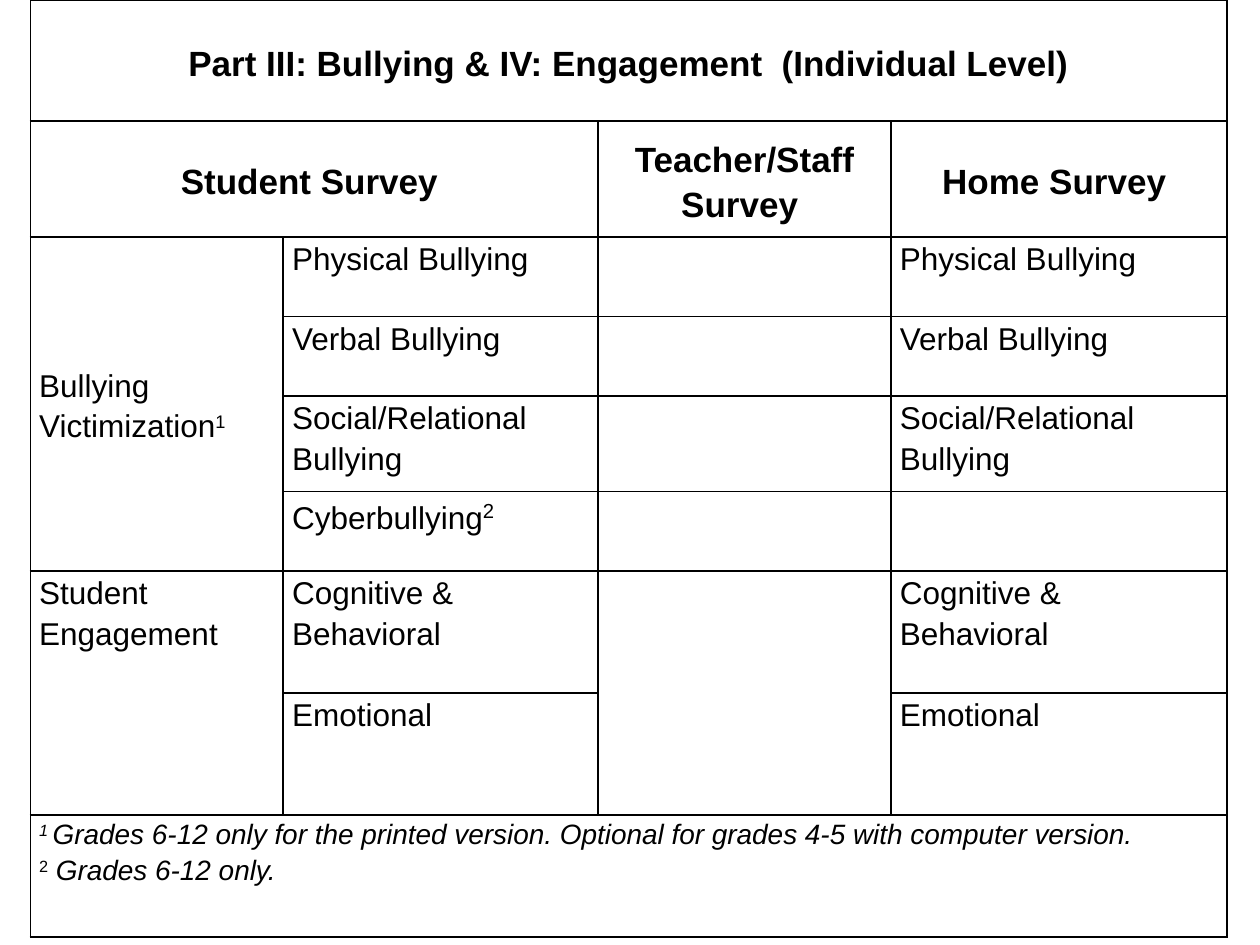
from lxml import etree
from pptx import Presentation
from pptx import util as u
from pptx.dml.color import RGBColor
from pptx.enum import text
from pptx.oxml.ns import qn

COLORS = {"ink": "000000", "paper": "FFFFFF"}
COLUMN_WIDTHS = [5.1, 6.35, 5.9, 6.78]
ROW_HEIGHTS = [2.44, 2.34, 1.6, 1.6, 1.93, 1.6, 2.46, 2.46, 2.46]

# First row, first column, last row, last column
MERGES = [(0, 0, 0, 3), (1, 0, 1, 1), (2, 0, 5, 0),
          (6, 0, 7, 0), (6, 2, 7, 2), (8, 0, 8, 3)]

HEADINGS = {
    (0, 0): "Part III: Bullying & IV: Engagement  (Individual Level)",
    (1, 0): "Student Survey ",
    (1, 2): "Teacher/Staff Survey ",
    (1, 3): "Home Survey ",
}
# Topics asked of students (column 1) and at home (column 3)
SHARED_TOPICS = {
    2: "Physical Bullying",
    3: "Verbal Bullying",
    4: "Social/Relational Bullying",
    6: "Cognitive & Behavioral",
    7: "Emotional",
}


def color(name):
    return RGBColor.from_string(COLORS[name])


def add_borders(cell):
    properties = cell._tc.get_or_add_tcPr()
    for index, side in enumerate(("lnL", "lnR", "lnT", "lnB")):
        line = etree.Element(qn("a:" + side), w=str(u.Pt(1)))
        fill = etree.SubElement(line, qn("a:solidFill"))
        etree.SubElement(fill, qn("a:srgbClr"), val=COLORS["ink"])
        properties.insert(index, line)


def add_table(slide):
    shape = slide.shapes.add_table(
        len(ROW_HEIGHTS), len(COLUMN_WIDTHS), u.Cm(0.61), u.Cm(0),
        u.Cm(sum(COLUMN_WIDTHS)), u.Cm(sum(ROW_HEIGHTS)))
    table = shape.table
    table.first_row = table.horz_banding = False
    for column, width in zip(table.columns, COLUMN_WIDTHS):
        column.width = u.Cm(width)
    for row, height in zip(table.rows, ROW_HEIGHTS):
        row.height = u.Cm(height)
    for cell in table.iter_cells():
        cell.fill.solid()
        cell.fill.fore_color.rgb = color("paper")
        add_borders(cell)
    for top, left, bottom, right in MERGES:
        table.cell(top, left).merge(table.cell(bottom, right))
    return table


def set_margins(cell, side, top):
    cell.margin_left = cell.margin_right = u.Cm(side)
    cell.margin_top, cell.margin_bottom = u.Cm(top), 0


def format_paragraph(paragraph, size, bold=False, italic=False):
    paragraph.line_spacing = 1.15
    font = paragraph.font
    font.name, font.size = "Arial", u.Pt(size)
    font.bold, font.italic = bold, italic
    font.color.rgb = color("ink")


def add_run(paragraph, words, raised=False):
    run = paragraph.add_run()
    run.text = words
    if raised:
        run._r.get_or_add_rPr().set("baseline", "30000")
    return run


def write_heading(cell, words):
    set_margins(cell, 0.08, 0.03)
    cell.vertical_anchor = text.MSO_ANCHOR.MIDDLE
    paragraph = cell.text_frame.paragraphs[0]
    format_paragraph(paragraph, 20, bold=True)
    paragraph.alignment = text.PP_ALIGN.CENTER
    paragraph.space_after = u.Pt(10)
    add_run(paragraph, words)


def write_topic(cell, words):
    set_margins(cell, 0.18, 0)
    paragraph = cell.text_frame.paragraphs[0]
    format_paragraph(paragraph, 18)
    add_run(paragraph, words)
    return paragraph


def write_footnotes(cell):
    set_margins(cell, 0.18, 0)
    first = cell.text_frame.paragraphs[0]
    second = cell.text_frame.add_paragraph()
    for paragraph in (first, second):
        format_paragraph(paragraph, 16, italic=True)
    add_run(first, "1 ", raised=True)
    add_run(first, "Grades 6-12 only for the printed version. "
                   "Optional for grades 4-5 with computer version.")
    add_run(second, "2", raised=True).font.italic = False
    add_run(second, " Grades 6-12 only.")


def main():
    presentation = Presentation()
    presentation.slide_width, presentation.slide_height = u.Cm(25.4), u.Cm(19.05)
    slide = presentation.slides.add_slide(presentation.slide_layouts[6])
    table = add_table(slide)

    # Title and survey headings
    for position, words in HEADINGS.items():
        write_heading(table.cell(*position), words)

    # Topic groups
    victimization = table.cell(2, 0)
    victimization.vertical_anchor = text.MSO_ANCHOR.MIDDLE
    add_run(write_topic(victimization, "Bullying Victimization"), "1", raised=True)
    write_topic(table.cell(6, 0), "Student Engagement")

    # Topics
    for row, words in SHARED_TOPICS.items():
        for column in (1, 3):
            write_topic(table.cell(row, column), words)
    cyberbullying = write_topic(table.cell(5, 1), "Cyberbullying")
    add_run(cyberbullying, "2", raised=True).font.size = u.Pt(20)

    write_footnotes(table.cell(8, 0))
    presentation.save("out.pptx")


if __name__ == "__main__":
    main()
